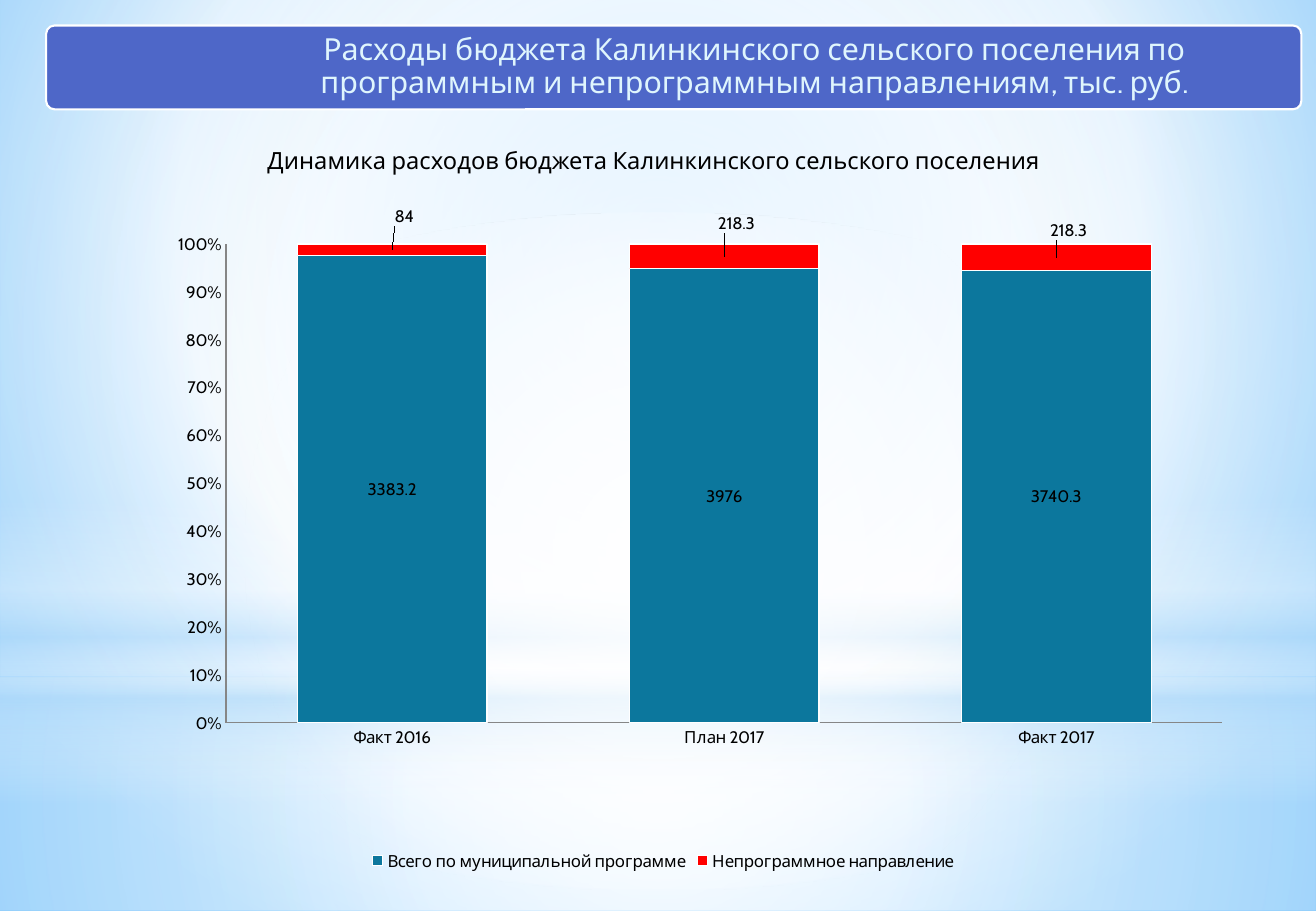
from lxml import etree
from pptx import Presentation
from pptx.chart.data import CategoryChartData
from pptx.dml.color import RGBColor
from pptx.enum.chart import XL_CHART_TYPE, XL_LEGEND_POSITION, XL_TICK_MARK
from pptx.enum.shapes import MSO_SHAPE
from pptx.enum.text import MSO_ANCHOR, PP_ALIGN
from pptx.oxml import parse_xml
from pptx.oxml.ns import nsdecls, qn
from pptx.util import Inches, Pt

STACKED = XL_CHART_TYPE.COLUMN_STACKED_100
LEGEND_BOTTOM = XL_LEGEND_POSITION.BOTTOM
NO_TICK = XL_TICK_MARK.NONE
RECTANGLE, OVAL, ROUNDED = MSO_SHAPE.RECTANGLE, MSO_SHAPE.OVAL, MSO_SHAPE.ROUNDED_RECTANGLE
MIDDLE, TOP = MSO_ANCHOR.MIDDLE, MSO_ANCHOR.TOP
CENTER = PP_ALIGN.CENTER

# Content
HEADING = ("Расходы бюджета Калинкинского сельского поселения по "
           "программным и непрограммным направлениям, тыс. руб.")
CHART_TITLE = "Динамика расходов бюджета Калинкинского сельского поселения"
CATEGORIES = ["Факт 2016", "План 2017", "Факт 2017"]
SERIES = [
    ("Всего по муниципальной программе", [3383.2, 3976, 3740.3], "program"),
    ("Непрограммное направление", [84, 218.3, 218.3], "other"),
]
LABEL_SHIFTS = [(0.01, -0.05), (0.01, -0.05), (0.01, -0.04)]  # shares of the chart size
PLOT_AREA = {"x": 0.14, "y": 0.05, "w": 0.82, "h": 0.72}

THEME = {
    "font": "Cabin", "heading_size": 18, "title_size": 14, "chart_size": 10,
    "banner": "4E67C8", "heading": "DFF5FD", "white": "FFFFFF", "text": "000000",
    "program": "0C779D", "other": "FF0000", "axis": "868686",
}

# Gradients: stops are (position %, colour, opacity %); focus is left, top, right, bottom %
WIDTH, HEIGHT, HORIZON = 10.83, 7.5, 5.58
CENTRE_FOCUS = (50, 50, 50, 50)
BACKGROUND_STOPS = [(0, "9ED5FF", 100), (60, "FFFFFF", 100), (100, "5BB9FF", 100)]
BACKGROUND_FOCUS = (20, 10, 20, 60)
BACKDROP = [
    (RECTANGLE, (0, HORIZON, WIDTH, HEIGHT - HORIZON), CENTRE_FOCUS,
     [(0, "FFFFFF", 91), (37, "FFFFFF", 76), (100, "B4DCFA", 79)]),
    (RECTANGLE, (0, 0, WIDTH, HORIZON), CENTRE_FOCUS,
     [(0, "FFFFFF", 89), (48, "FFFFFF", 62), (100, "B4DCFA", 79)]),
    (RECTANGLE, (0, 4.12, WIDTH, 2.5), None,
     [(0, "FFFFFF", 0), (29, "FFFFFF", 30), (45, "B4DCFA", 40),
      (55, "FFFFFF", 26), (65, "B4DCFA", 60), (100, "FFFFFF", 0)]),
    (OVAL, (0, 1.75, WIDTH, HORIZON), CENTRE_FOCUS,
     [(0, "FFFFFF", 100), (56, "FFFFFF", 0)]),
]


def color(name):
    return RGBColor.from_string(THEME[name])


def box(*lengths):
    return [Inches(length) for length in lengths]


def set_gradient(fill, properties, stops, focus):
    """Swap a solid fill for a radial gradient, or a vertical one without a focus."""
    fill.solid()
    stop_xml = "".join(
        f'<a:gs pos="{position * 1000}"><a:srgbClr val="{value}">'
        f'<a:alpha val="{opacity * 1000}"/></a:srgbClr></a:gs>'
        for position, value, opacity in stops)
    if focus:
        sides = " ".join(f'{side}="{share * 1000}"' for side, share in zip("ltrb", focus))
        direction = f'<a:path path="circle"><a:fillToRect {sides}/></a:path>'
    else:
        direction = '<a:lin ang="5400000" scaled="0"/>'
    gradient = parse_xml(f'<a:gradFill {nsdecls("a")} rotWithShape="1">'
                         f'<a:gsLst>{stop_xml}</a:gsLst>{direction}</a:gradFill>')
    properties.replace(properties.find(qn("a:solidFill")), gradient)


def add_layout(parent, position, values, inner=False):
    """Put a manual chart layout at the given child position."""
    layout = etree.Element(qn("c:layout"))
    manual = etree.SubElement(layout, qn("c:manualLayout"))
    if inner:
        for tag, value in (("layoutTarget", "inner"), ("xMode", "edge"), ("yMode", "edge")):
            etree.SubElement(manual, qn(f"c:{tag}"), val=value)
    for tag, value in values.items():
        etree.SubElement(manual, qn(f"c:{tag}"), val=str(value))
    parent.insert(position, layout)


def style_font(font, size, name):
    font.name = THEME["font"]
    font.size = Pt(THEME[size])
    font.color.rgb = color(name)


def add_text(slide, bounds, text, size, name, anchor):
    frame = slide.shapes.add_textbox(*box(*bounds)).text_frame
    frame.word_wrap = True
    frame.vertical_anchor = anchor
    paragraph = frame.paragraphs[0]
    paragraph.text = text
    paragraph.alignment = CENTER
    style_font(paragraph.font, size, name)
    return frame


def add_backdrop(slide):
    fill = slide.background.fill
    fill.solid()
    properties = slide.element.find(f".//{qn('p:bgPr')}")
    set_gradient(fill, properties, BACKGROUND_STOPS, BACKGROUND_FOCUS)
    for kind, bounds, focus, stops in BACKDROP:
        shape = slide.shapes.add_shape(kind, *box(*bounds))
        shape.shadow.inherit = False
        shape.line.fill.background()
        set_gradient(shape.fill, shape.element.spPr, stops, focus)


def add_banner(slide):
    banner = slide.shapes.add_shape(ROUNDED, *box(0.38, 0.21, 10.33, 0.69))
    banner.adjustments[0] = 0.1
    banner.shadow.inherit = False
    banner.fill.solid()
    banner.fill.fore_color.rgb = color("banner")
    banner.line.color.rgb = color("white")
    banner.line.width = Pt(1.25)
    frame = add_text(slide, (2.51, 0.21, 8.19, 0.69), HEADING, "heading_size", "heading", MIDDLE)
    frame.margin_left, frame.margin_top, frame.margin_right, frame.margin_bottom = box(
        0, 0.07, 0.79, 0.07)
    frame.paragraphs[0].line_spacing = 0.9


def add_budget_chart(slide):
    data = CategoryChartData()
    data.categories = CATEGORIES
    for name, values, _ in SERIES:
        data.add_series(name, values)
    chart = slide.shapes.add_chart(STACKED, *box(0.46, 1.7, 10, 5.51), data).chart
    chart.has_title = False
    style_font(chart.font, "chart_size", "text")
    chart.has_legend = True
    chart.legend.position = LEGEND_BOTTOM
    chart.legend.include_in_layout = False

    # Axes
    for axis in (chart.category_axis, chart.value_axis):
        axis.has_major_gridlines = False
        axis.major_tick_mark = axis.minor_tick_mark = NO_TICK
        axis.format.line.color.rgb = color("axis")
        axis.format.line.width = Pt(0.75)
    chart.value_axis.tick_labels.number_format = "0%"
    chart.value_axis.tick_labels.number_format_is_linked = False

    # Columns and their values
    plot = chart.plots[0]
    plot.gap_width, plot.overlap = 75, 100
    plot.vary_by_categories = False
    for series, (_, _, fill_name) in zip(plot.series, SERIES):
        series.format.fill.solid()
        series.format.fill.fore_color.rgb = color(fill_name)
        series.format.line.color.rgb = color("white")
        series.format.line.width = Pt(0.75)
        series.data_labels.show_value = True

    # Values of the thin upper parts stand above the columns
    upper = plot.series[1]
    for index, (shift_x, shift_y) in enumerate(LABEL_SHIFTS):
        style_font(upper.points[index].data_label.font, "chart_size", "text")
    labels = upper.data_labels._element.findall(qn("c:dLbl"))
    for label, (shift_x, shift_y) in zip(labels, LABEL_SHIFTS):
        add_layout(label, 1, {"x": shift_x, "y": shift_y})

    plot_area = chart.element.find(f".//{qn('c:plotArea')}")
    for layout in plot_area.findall(qn("c:layout")):
        plot_area.remove(layout)
    add_layout(plot_area, 0, PLOT_AREA, inner=True)


def main():
    presentation = Presentation()
    presentation.slide_width, presentation.slide_height = box(WIDTH, HEIGHT)
    slide = presentation.slides.add_slide(presentation.slide_layouts[6])
    add_backdrop(slide)
    add_banner(slide)
    add_budget_chart(slide)
    add_text(slide, (1.64, 1.15, 7.48, 0.34), CHART_TITLE, "title_size", "text", TOP)
    presentation.save("out.pptx")


if __name__ == "__main__":
    main()
